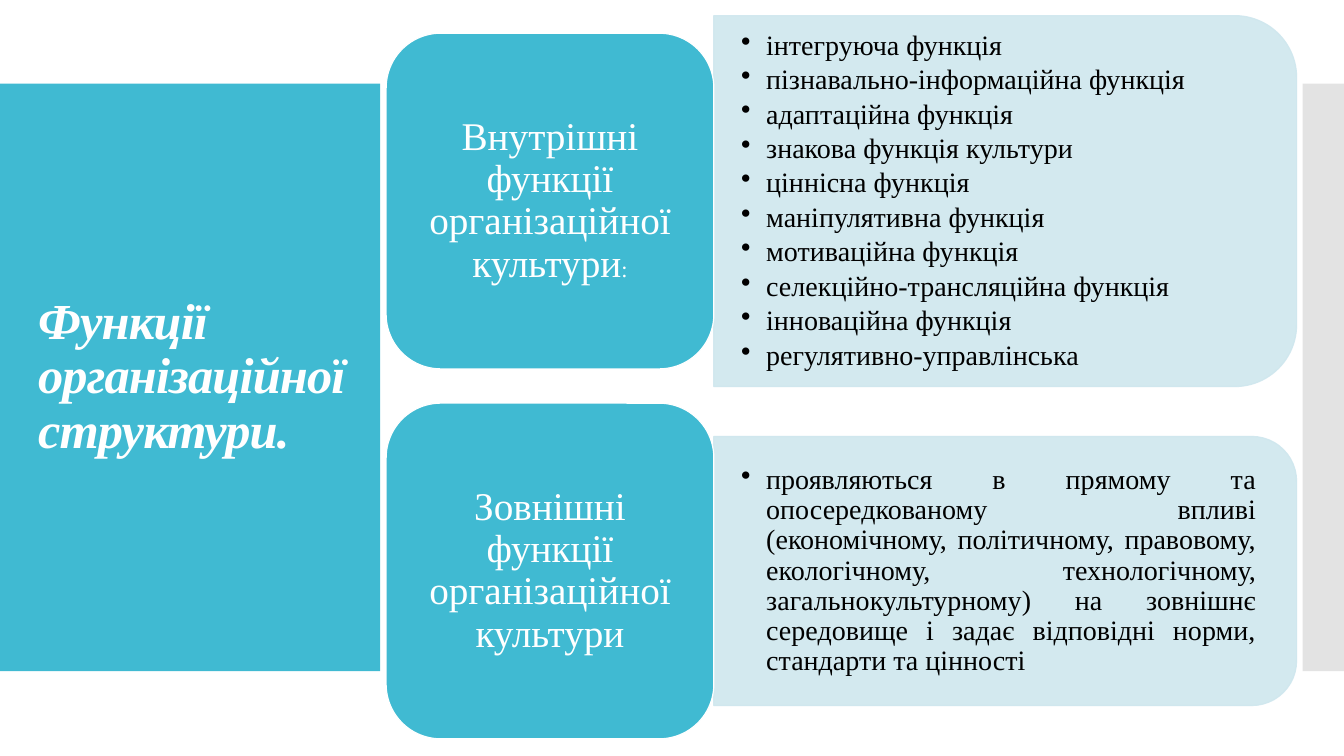
from dataclasses import dataclass

import pptx
import pptx.dml.color
import pptx.enum.shapes
import pptx.enum.text
import pptx.oxml
import pptx.oxml.ns
import pptx.util
from pptx.util import Inches, Pt

Shape = pptx.enum.shapes.MSO_SHAPE
Align = pptx.enum.text.PP_ALIGN


@dataclass(frozen=True)
class Theme:
    """Colours, font and type sizes of the slide."""
    teal: str = "40BAD2"
    pale: str = "CFE7EE"
    grey: str = "C8C8C8"
    white: str = "FFFFFF"
    black: str = "000000"
    font: str = "Times New Roman"
    title_size: int = 36
    card_size: int = 28
    colon_size: int = 16
    list_size: int = 20
    line_width: float = 0.85


THEME = Theme()

INNER_FUNCTIONS = [
    "інтегруюча функція",
    "пізнавально-інформаційна функція",
    "адаптаційна функція",
    "знакова функція культури",
    "ціннісна функція",
    "маніпулятивна функція",
    "мотиваційна функція",
    "селекційно-трансляційна функція",
    "інноваційна функція",
    "регулятивно-управлінська",
]
OUTER_FUNCTIONS = [
    "проявляються в прямому та опосередкованому впливі (економічному, "
    "політичному, правовому, екологічному, технологічному, "
    "загальнокультурному) на зовнішнє середовище і задає відповідні норми, "
    "стандарти та цінності",
]


def rgb(colour):
    """Turn a hex string into a colour."""
    return pptx.dml.color.RGBColor.from_string(colour)


def set_alpha(fill_parent, percent):
    """Make the solid fill under an element partly transparent."""
    colour = fill_parent.find(".//" + pptx.oxml.ns.qn("a:srgbClr"))
    alpha = pptx.oxml.parse_xml(
        f'<a:alpha {pptx.oxml.ns.nsdecls("a")} val="{percent * 1000}"/>')
    colour.append(alpha)


def add_box(slide, kind, box, fill, line=None, alpha=None):
    """Add a filled preset shape in a box given in inches."""
    shape = slide.shapes.add_shape(kind, *map(Inches, box))
    shape.shadow.inherit = False
    shape.fill.solid()
    shape.fill.fore_color.rgb = rgb(fill)
    if line:
        shape.line.color.rgb = rgb(line)
        shape.line.width = Pt(THEME.line_width)
    else:
        shape.line.fill.background()
    if alpha:
        properties = shape.fill._xPr
        set_alpha(properties.find(pptx.oxml.ns.qn("a:solidFill")), alpha)
        if line:
            set_alpha(properties.find(pptx.oxml.ns.qn("a:ln")), alpha)
    return shape


def prepare_frame(shape, horizontal, vertical):
    """Wrap and centre the text vertically, with insets in inches."""
    frame = shape.text_frame
    frame.word_wrap = True
    frame.vertical_anchor = pptx.enum.text.MSO_ANCHOR.MIDDLE
    frame.margin_left = frame.margin_right = Inches(horizontal)
    frame.margin_top = frame.margin_bottom = Inches(vertical)
    return frame


def style_paragraph(paragraph, size, colour, align):
    """Set the font, spacing and alignment of a paragraph."""
    paragraph.font.name = THEME.font
    paragraph.font.size = Pt(size)
    paragraph.font.color.rgb = rgb(colour)
    paragraph.alignment = align
    paragraph.line_spacing = 0.9


def add_bullet(paragraph):
    """Give a paragraph a round bullet with a hanging indent."""
    properties = paragraph._p.get_or_add_pPr()
    properties.set("marL", str(Inches(0.25)))
    properties.set("indent", str(-Inches(0.25)))
    bullet = pptx.oxml.parse_xml(
        f'<a:buChar {pptx.oxml.ns.nsdecls("a")} char="•"/>')
    properties.find(pptx.oxml.ns.qn("a:defRPr")).addprevious(bullet)


def add_title(slide, box, text):
    """Write the slide title in bold italics."""
    shape = slide.shapes.add_textbox(*map(Inches, box))
    paragraph = prepare_frame(shape, 0.1, 0.05).paragraphs[0]
    run = paragraph.add_run()
    run.text = text
    style_paragraph(paragraph, THEME.title_size, THEME.white, Align.LEFT)
    paragraph.font.bold = paragraph.font.italic = True
    run._r.get_or_add_rPr().set("spc", "-60")


def add_card(slide, box, text, ending):
    """Add a rounded heading card with an optional small ending."""
    card = add_box(slide, Shape.ROUNDED_RECTANGLE, box, THEME.teal, THEME.white)
    paragraph = prepare_frame(card, 0.12, 0.06).paragraphs[0]
    paragraph.add_run().text = text
    style_paragraph(paragraph, THEME.card_size, THEME.white, Align.CENTER)
    if ending:
        run = paragraph.add_run()
        run.text = ending
        run.font.size = Pt(THEME.colon_size)


def add_panel(slide, box, items, align):
    """Add a pale panel rounded on the right, with a bulleted list."""
    left, top, width, height = box
    turned = (left + (width - height) / 2, top + (height - width) / 2,
              height, width)
    panel = add_box(slide, Shape.ROUND_2_SAME_RECTANGLE, turned,
                    THEME.pale, THEME.pale, 90)
    panel.rotation = 90
    inset = 0.05 * height
    text_box = (left, top + inset, width - inset, height - 2 * inset)
    shape = slide.shapes.add_textbox(*map(Inches, text_box))
    frame = prepare_frame(shape, 0.27, 0.14)
    for index, item in enumerate(items):
        paragraph = frame.add_paragraph() if index else frame.paragraphs[0]
        paragraph.add_run().text = item
        style_paragraph(paragraph, THEME.list_size, THEME.black, align)
        paragraph.space_after = Pt(3)
        add_bullet(paragraph)


def add_row(slide, box, panel_height, heading, ending, items, align):
    """Place a heading card and its panel, centred on each other."""
    left, top, width, height = box
    card_width = 3.25
    panel_top = top + (height - panel_height) / 2
    add_panel(slide, (left + card_width, panel_top, width - card_width,
                      panel_height), items, align)
    add_card(slide, (left, top, card_width, height), heading, ending)


def main():
    """Build the slide and save it."""
    presentation = pptx.Presentation()
    presentation.slide_width = Inches(13.33)
    presentation.slide_height = Inches(7.5)
    slide = presentation.slides.add_slide(presentation.slide_layouts[6])
    add_box(slide, Shape.RECTANGLE, (0, 0.83, 3.77, 5.83), THEME.teal)
    add_box(slide, Shape.RECTANGLE, (12.92, 0.83, 0.41, 5.83), THEME.grey,
            alpha=50)
    add_title(slide, (0.28, 1.23, 3.43, 5.03),
              "Функції організаційної структури.")
    add_row(slide, (3.83, 0.33, 9.03, 3.33), 3.68,
            "Внутрішні функції організаційної культури", ":",
            INNER_FUNCTIONS, Align.LEFT)
    add_row(slide, (3.83, 4, 9.03, 3.33), 2.67,
            "Зовнішні функції організаційної культури", "",
            OUTER_FUNCTIONS, Align.JUSTIFY)
    presentation.save("out.pptx")


if __name__ == "__main__":
    main()
